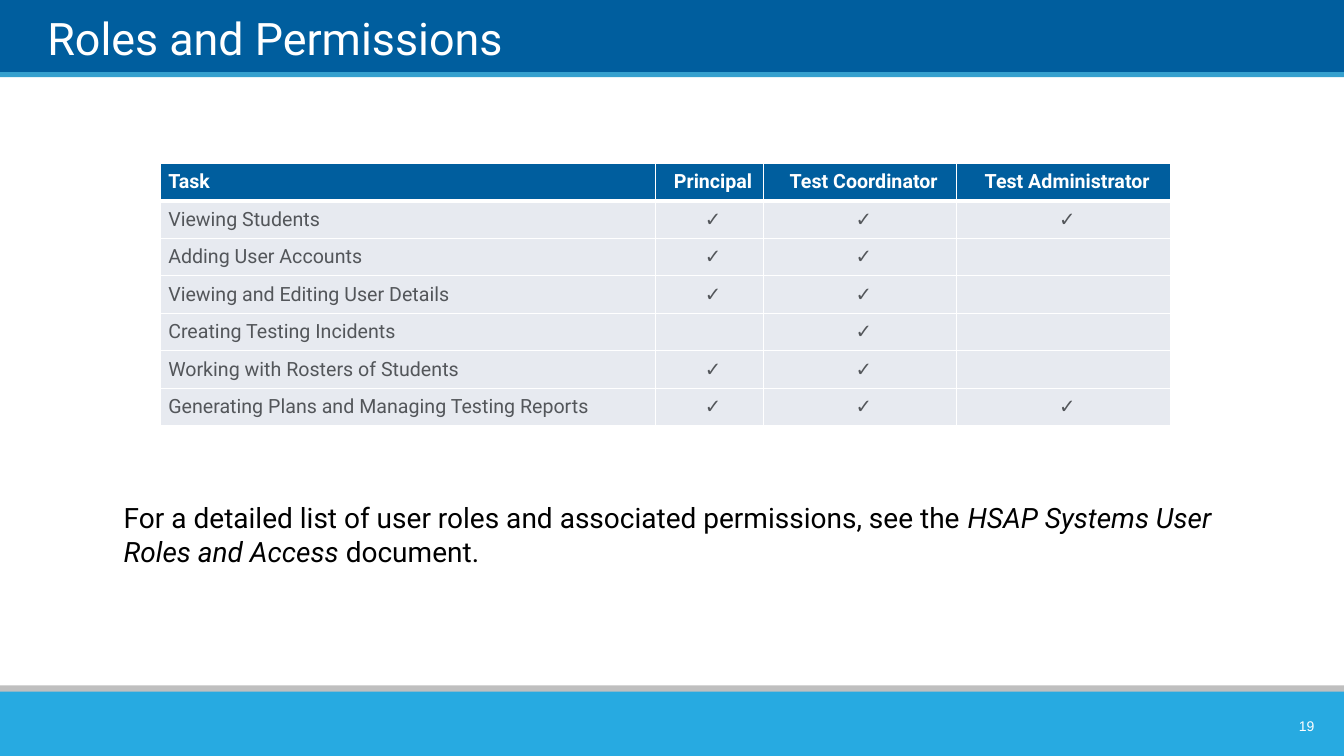
from dataclasses import dataclass

from lxml import etree
from pptx import Presentation
from pptx import util as u
from pptx.dml import color
from pptx.enum import shapes, text
from pptx.oxml import ns


@dataclass(frozen=True)
class Theme:
    navy: str = "005E9E"
    stripe: str = "35A0CE"
    grey: str = "BFBFBF"
    sky: str = "27AAE1"
    white: str = "FFFFFF"
    black: str = "000000"
    cell: str = "E7EAF0"
    cell_text: str = "53565A"
    font: str = "Roboto"
    number_font: str = "Arial"
    title_size: float = 32
    body_size: float = 20
    table_size: float = 14
    number_size: float = 10


@dataclass(frozen=True)
class Bar:
    top: float
    height: float
    fill: str


@dataclass(frozen=True)
class Label:
    spans: tuple[str, ...]  # every second span is italic
    left: float
    top: float
    width: float
    height: float
    size: float
    ink: str
    font: str
    anchor: text.MSO_ANCHOR
    align: text.PP_ALIGN
    inset: tuple[float, float] = (7.2, 3.6)


@dataclass(frozen=True)
class Task:
    name: str
    principal: bool
    coordinator: bool
    administrator: bool


THEME = Theme()
WIDTH, HEIGHT = 960, 540
CHECK = "✓"

BARS = [
    Bar(0, 53.3, THEME.navy),
    Bar(51.6, 3.6, THEME.stripe),
    Bar(489.6, 10, THEME.grey),
    Bar(494, 46, THEME.sky),
]
LABELS = [
    Label(("Roles and Permissions",), 33.84, 5, 867.6, 41, THEME.title_size, THEME.white,
          THEME.font, text.MSO_ANCHOR.BOTTOM, text.PP_ALIGN.LEFT, (0, 0)),
    Label(("For a detailed list of user roles and associated permissions, see the ",
           "HSAP Systems User Roles and Access", " document."),
          81.3, 354.3, 819.4, 55.4, THEME.body_size, THEME.black,
          THEME.font, text.MSO_ANCHOR.TOP, text.PP_ALIGN.LEFT),
    Label(("19",), 890.6, 507.6, 55.4, 21.6, THEME.number_size, THEME.white,
          THEME.number_font, text.MSO_ANCHOR.MIDDLE, text.PP_ALIGN.RIGHT),
]
HEADINGS = ("Task", "Principal", "Test Coordinator", "Test Administrator")
TASKS = [
    Task("Viewing Students", True, True, True),
    Task("Adding User Accounts", True, True, False),
    Task("Viewing and Editing User Details", True, True, False),
    Task("Creating Testing Incidents", False, True, False),
    Task("Working with Rosters of Students", True, True, False),
    Task("Generating Plans and Managing Testing Reports", True, True, True),
]
TABLE_LEFT, TABLE_TOP, ROW_HEIGHT = 114.8, 116.7, 26.8
COLUMN_WIDTHS = (353.2, 77.4, 137.8, 153)


def rgb(value: str) -> color.RGBColor:
    return color.RGBColor.from_string(value)


def style_font(font, name: str, size: float, ink: str, bold: bool = False) -> None:
    font.name = name
    font.size = u.Pt(size)
    font.bold = bold
    font.color.rgb = rgb(ink)


def draw_bar(page, bar: Bar) -> None:
    shape = page.shapes.add_shape(shapes.MSO_SHAPE.RECTANGLE, 0, u.Pt(bar.top),
                                  u.Pt(WIDTH), u.Pt(bar.height))
    shape.shadow.inherit = False
    shape.fill.solid()
    shape.fill.fore_color.rgb = rgb(bar.fill)
    shape.line.fill.background()


def draw_label(page, label: Label) -> None:
    box = page.shapes.add_textbox(u.Pt(label.left), u.Pt(label.top),
                                  u.Pt(label.width), u.Pt(label.height))
    frame = box.text_frame
    frame.word_wrap = True
    frame.vertical_anchor = label.anchor
    side, edge = label.inset
    frame.margin_left = frame.margin_right = u.Pt(side)
    frame.margin_top = frame.margin_bottom = u.Pt(edge)
    para = frame.paragraphs[0]
    para.alignment = label.align
    for index, words in enumerate(label.spans):
        span = para.add_run()
        span.text = words
        style_font(span.font, label.font, label.size, label.ink)
        span.font.italic = index % 2 == 1


def draw_borders(cell, top: float, bottom: float) -> None:
    properties = cell._tc.get_or_add_tcPr()
    for side, width in (("L", 1), ("R", 1), ("T", top), ("B", bottom)):
        line = etree.SubElement(properties, ns.qn(f"a:ln{side}"), w=str(u.Pt(width)))
        fill = etree.SubElement(line, ns.qn("a:solidFill"))
        etree.SubElement(fill, ns.qn("a:srgbClr"), val=THEME.white)


def draw_cell(cell, words: str, row: int, column: int) -> None:
    header = row == 0
    draw_borders(cell, 3 if row == 1 else 1, 3 if header else 1)
    cell.fill.solid()
    cell.fill.fore_color.rgb = rgb(THEME.navy if header else THEME.cell)
    cell.vertical_anchor = text.MSO_ANCHOR.MIDDLE
    cell.margin_left = u.Pt(5.4)
    cell.margin_right = cell.margin_top = cell.margin_bottom = 0
    para = cell.text_frame.paragraphs[0]
    para.text = words
    para.alignment = text.PP_ALIGN.CENTER if column else text.PP_ALIGN.LEFT
    ink = THEME.white if header else THEME.cell_text
    for span in para.runs:
        style_font(span.font, THEME.font, THEME.table_size, ink, header)


def draw_table(page) -> None:
    rows = [HEADINGS]
    for task in TASKS:
        allowed = (task.principal, task.coordinator, task.administrator)
        rows.append((task.name, *(CHECK if yes else "" for yes in allowed)))
    table = page.shapes.add_table(
        len(rows), len(HEADINGS), u.Pt(TABLE_LEFT), u.Pt(TABLE_TOP),
        u.Pt(sum(COLUMN_WIDTHS)), u.Pt(ROW_HEIGHT * len(rows))).table
    table.horz_banding = False
    for column, width in zip(table.columns, COLUMN_WIDTHS):
        column.width = u.Pt(width)
    for row_index, row in enumerate(rows):
        table.rows[row_index].height = u.Pt(ROW_HEIGHT)
        for column_index, words in enumerate(row):
            draw_cell(table.cell(row_index, column_index), words, row_index, column_index)


def main() -> None:
    deck = Presentation()
    deck.slide_width, deck.slide_height = u.Pt(WIDTH), u.Pt(HEIGHT)
    page = deck.slides.add_slide(deck.slide_layouts[6])
    # Header and footer bands
    for bar in BARS:
        draw_bar(page, bar)
    # Title, note and page number
    for label in LABELS:
        draw_label(page, label)
    # Permissions by role
    draw_table(page)
    deck.save("out.pptx")


if __name__ == "__main__":
    main()
